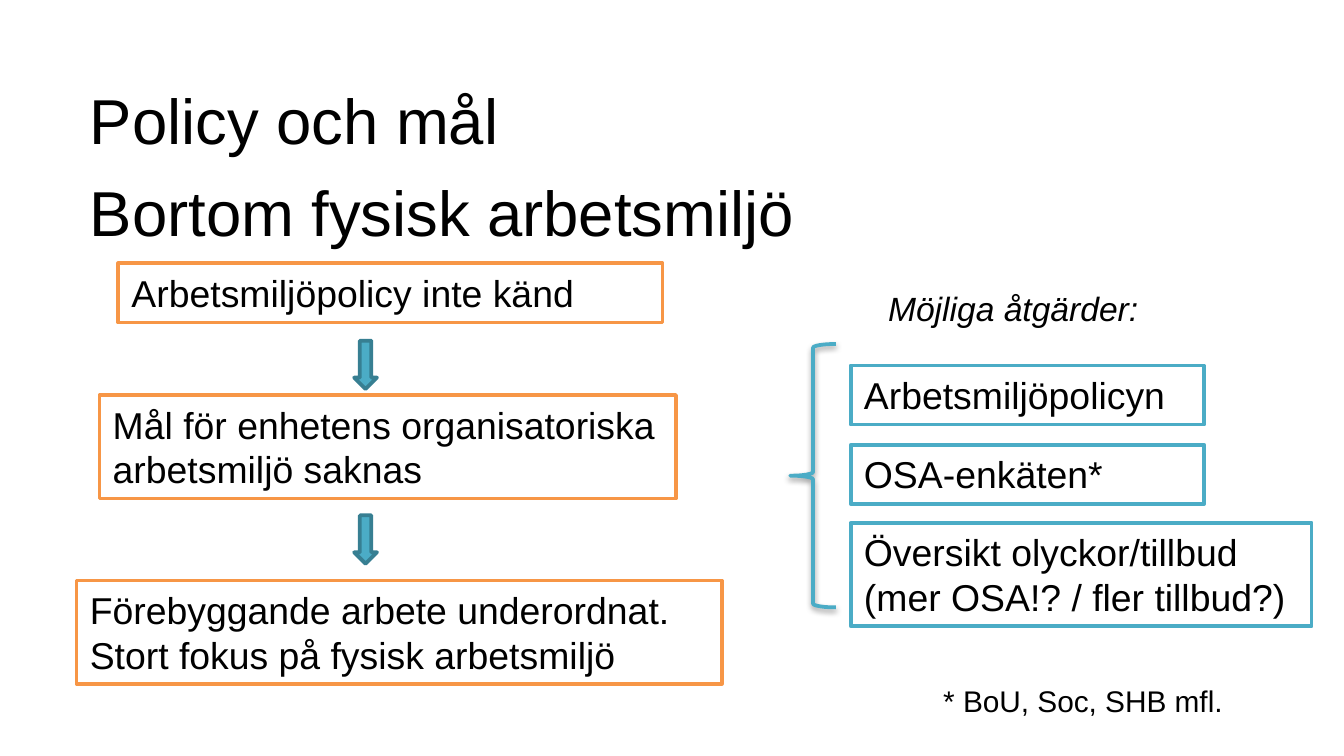
from dataclasses import dataclass

from lxml.etree import SubElement
from pptx import Presentation
from pptx.dml.color import RGBColor
from pptx.enum.shapes import MSO_SHAPE
from pptx.enum.text import MSO_ANCHOR
from pptx.oxml.ns import qn
from pptx.util import Inches, Pt

ORANGE, TEAL, DARK_TEAL = "F79646", "4BACC6", "377F92"
BLACK, WHITE = "000000", "FFFFFF"
WIDTH, HEIGHT = Inches(10), Inches(5.625)
COL, ROW = WIDTH / 100, HEIGHT / 56.25
ONE_LINE, TWO_LINES = 4.4, 7.7


@dataclass
class Box:
    """Place on the grid, in columns and rows."""
    x: float
    y: float
    w: float
    h: float

    def emu(self) -> list[int]:
        """Return left, top, width and height as lengths."""
        return [round(n * unit) for n, unit in zip((self.x, self.y, self.w, self.h), (COL, ROW) * 2)]


@dataclass
class Statement:
    """Framed text and its frame colour."""
    box: Box
    text: str
    color: str


STATEMENTS = [
    Statement(Box(8.8, 19.6, 40.5, ONE_LINE), "Arbetsmiljöpolicy inte känd", ORANGE),
    Statement(Box(7.4, 29.4, 42.9, TWO_LINES), "Mål för enhetens organisatoriska arbetsmiljö saknas", ORANGE),
    Statement(Box(5.7, 43.2, 48, TWO_LINES),
              "Förebyggande arbete underordnat. Stort fokus på fysisk arbetsmiljö", ORANGE),
    Statement(Box(63.3, 27.2, 26.3, ONE_LINE), "Arbetsmiljöpolicyn", TEAL),
    Statement(Box(63.3, 33.1, 26.3, ONE_LINE), "OSA-enkäten*", TEAL),
    Statement(Box(63.3, 38.9, 34.3, TWO_LINES), "Översikt olyckor/tillbud\n(mer OSA!? / fler tillbud?)", TEAL),
]
ARROWS = [Box(25.4, y, 3.6, 1.7) for y in (26.3, 39.3)]


def rgb(color: str) -> RGBColor:
    """Turn a hex string into a colour."""
    return RGBColor.from_string(color)


def write(sp, text: str, size: float = 20, italic: bool = False, gap: float = 0, top: float = 0.05) -> None:
    """Fill a shape with one paragraph per line of text."""
    tf = sp.text_frame
    tf.word_wrap = True
    tf.vertical_anchor = MSO_ANCHOR.TOP
    tf.margin_top = Inches(top)
    for i, line in enumerate(text.split("\n")):
        p = tf.add_paragraph() if i else tf.paragraphs[0]
        p.alignment = 1
        p.space_before = Pt(gap if i else 0)
        r = p.add_run()
        r.text = line
        r.font.name, r.font.size, r.font.italic = "Arial", Pt(size), italic
        r.font.color.rgb = rgb(BLACK)


def add_label(s, box: Box, text: str, **style) -> None:
    """Add unframed text."""
    write(s.shapes.add_textbox(*box.emu()), text, **style)


def add_shape(s, kind: MSO_SHAPE, box: Box, line: str, fill: str | None = None):
    """Add a flat preset shape with a two-point line."""
    sp = s.shapes.add_shape(kind, *box.emu())
    sp.shadow.inherit = False
    if fill:
        sp.fill.solid()
        sp.fill.fore_color.rgb = rgb(fill)
    else:
        sp.fill.background()
    sp.line.color.rgb = rgb(line)
    sp.line.width = Pt(2)
    return sp


def add_brace(s, box: Box) -> None:
    """Add the left brace with its soft shadow."""
    sp = add_shape(s, MSO_SHAPE.LEFT_BRACE, box, TEAL)
    sp.adjustments[0], sp.adjustments[1] = 0.08, 0.5
    effects = sp.element.spPr.find(qn("a:effectLst"))
    shadow = SubElement(effects, qn("a:outerShdw"), blurRad=str(Pt(3.1)), dist=str(Pt(1.6)),
                        dir="5400000", rotWithShape="0")
    color = SubElement(shadow, qn("a:srgbClr"), val=BLACK)
    SubElement(color, qn("a:alpha"), val="38000")


def main() -> None:
    """Build and save the slide."""
    prs = Presentation()
    prs.slide_width, prs.slide_height = WIDTH, HEIGHT
    s = prs.slides.add_slide(prs.slide_layouts[6])
    add_label(s, Box(5.7, 5.1, 89.5, 13.2), "Policy och mål\nBortom fysisk arbetsmiljö",
              size=34, gap=8.5, top=0.09)
    for item in STATEMENTS:
        write(add_shape(s, MSO_SHAPE.RECTANGLE, item.box, item.color, WHITE), item.text)
    add_brace(s, Box(58.8, 25.6, 3.4, 19.6))
    for box in ARROWS:
        add_shape(s, MSO_SHAPE.RIGHT_ARROW, box, DARK_TEAL, TEAL).rotation = 90
    add_label(s, Box(69.2, 50.3, 26.3, 3.7), "* BoU, Soc, SHB mfl.", size=16)
    add_label(s, Box(65.1, 20.9, 21.4, 4), "Möjliga åtgärder:", size=18, italic=True)
    prs.save("out.pptx")


if __name__ == "__main__":
    main()
